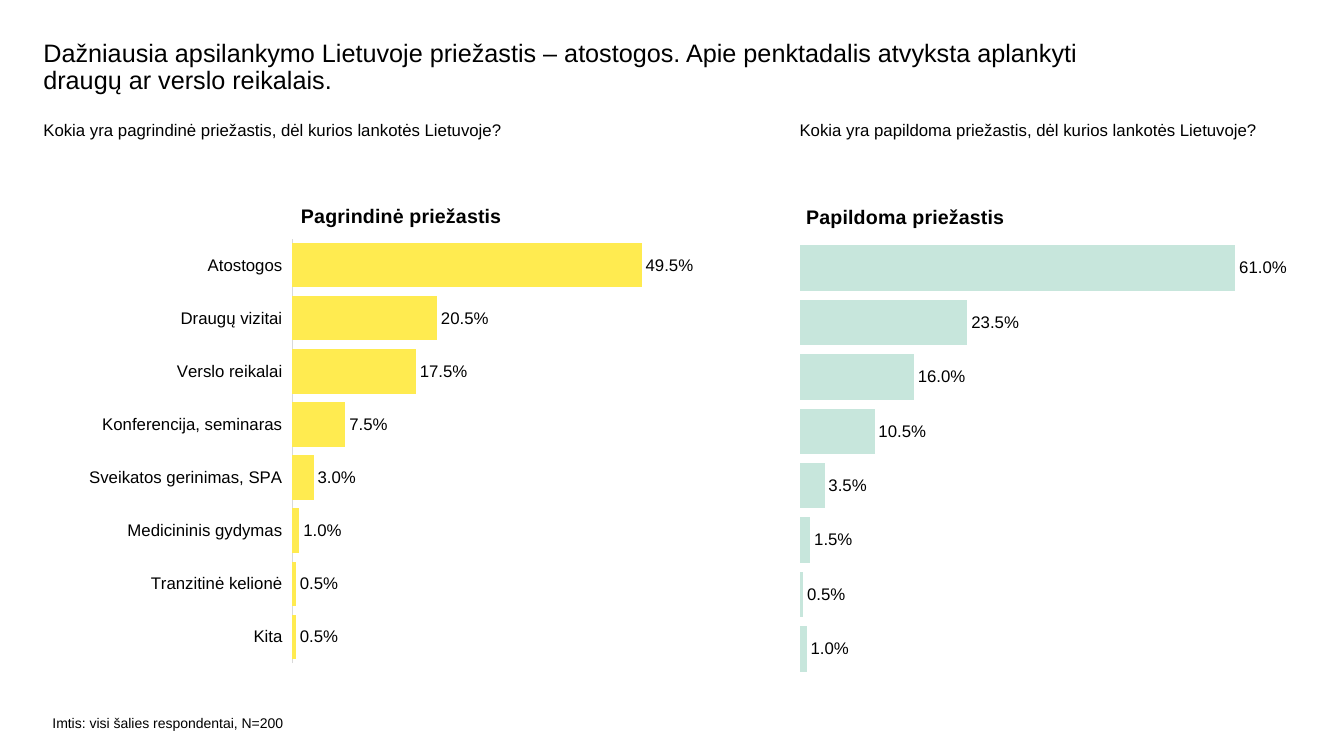
from dataclasses import dataclass

from lxml.etree import SubElement
from pptx import Presentation
from pptx.chart.chart import Chart
from pptx.chart.data import CategoryChartData
from pptx.dml.color import RGBColor
from pptx.enum.chart import XL_CHART_TYPE as ChartType
from pptx.enum.chart import XL_LABEL_POSITION as LabelPosition
from pptx.enum.chart import XL_TICK_LABEL_POSITION as TickLabelPosition
from pptx.enum.chart import XL_TICK_MARK as TickMark
from pptx.enum.text import MSO_ANCHOR as Anchor
from pptx.oxml.ns import qn
from pptx.oxml.xmlchemy import BaseOxmlElement
from pptx.slide import Slide
from pptx.text.text import Font, TextFrame
from pptx.util import Inches, Pt

BLACK = RGBColor(0x00, 0x00, 0x00)
YELLOW = RGBColor(0xFF, 0xEB, 0x50)
MINT = RGBColor(0xC7, 0xE6, 0xDC)
AXIS_GRAY = RGBColor(0xD9, 0xD9, 0xD9)
FONT_NAME = "Arial"
PERCENT = "0.0%"


@dataclass(frozen=True)
class Box:
    left: float
    top: float
    width: float
    height: float


@dataclass(frozen=True)
class ReasonChart:
    title: str
    frame: Box
    plot: Box
    title_left: float
    title_top: float
    categories: list[str]
    values: list[float]
    axis_maximum: float
    color: RGBColor
    show_categories: bool


@dataclass(frozen=True)
class Note:
    text: str
    box: Box
    size: int
    tab: float | None = None


TITLE = ("Dažniausia apsilankymo Lietuvoje priežastis – atostogos. "
         "Apie penktadalis atvyksta aplankyti draugų ar verslo reikalais.")
TITLE_BOX = Box(0.43, 0.4, 10.85, 0.6)

NOTES = [
    Note("Kokia yra pagrindinė priežastis, dėl kurios lankotės Lietuvoje?\t"
         "Kokia yra papildoma priežastis, dėl kurios lankotės Lietuvoje?",
         Box(0.43, 1.19, 12.29, 0.61), 12, tab=7.5),
    Note("Imtis: visi šalies respondentai, N=200", Box(0.52, 7.09, 2.53, 0.24), 10),
]

# Categories and values run from the top bar to the bottom bar
CHARTS = [
    ReasonChart(
        "Pagrindinė priežastis", Box(0.82, 1.8, 6.42, 4.87), Box(2.9, 2.37, 4.2, 4.21),
        2.95, 1.98,
        ["Atostogos", "Draugų vizitai", "Verslo reikalai", "Konferencija, seminaras",
         "Sveikatos gerinimas, SPA", "Medicininis gydymas", "Tranzitinė kelionė", "Kita"],
        [0.495, 0.205, 0.175, 0.075, 0.03, 0.01, 0.005, 0.005], 0.6, YELLOW, True),
    ReasonChart(
        "Papildoma priežastis", Box(7.83, 1.8, 5.17, 5), Box(7.93, 2.39, 4.96, 4.32),
        7.96, 1.99,
        [str(number) for number in range(8, 0, -1)],
        [0.61, 0.235, 0.16, 0.105, 0.035, 0.015, 0.005, 0.01], 0.7, MINT, False),
]


def inches(box: Box) -> tuple[Inches, Inches, Inches, Inches]:
    return Inches(box.left), Inches(box.top), Inches(box.width), Inches(box.height)


def style_font(font: Font, size: int, bold: bool = False) -> None:
    font.name = FONT_NAME
    font.size = Pt(size)
    font.bold = bold
    font.color.rgb = BLACK


def fill_text(text_frame: TextFrame, text: str, size: int, tab: float | None = None) -> None:
    text_frame.word_wrap = True
    text_frame.vertical_anchor = Anchor.TOP
    text_frame.margin_left = text_frame.margin_right = 0
    text_frame.margin_top = text_frame.margin_bottom = 0
    text_frame.text = text
    paragraph = text_frame.paragraphs[0]
    if tab is not None:
        tab_list = SubElement(paragraph._p.get_or_add_pPr(), qn("a:tabLst"))
        SubElement(tab_list, qn("a:tab"), pos=str(Inches(tab)), algn="l")
    style_font(paragraph.font, size)


def set_layout(parent: BaseOxmlElement, index: int, settings: dict[str, str | float]) -> None:
    """Replace the manual layout of a chart part."""
    for old_layout in parent.findall(qn("c:layout")):
        parent.remove(old_layout)
    layout = SubElement(parent, qn("c:layout"))
    manual = SubElement(layout, qn("c:manualLayout"))
    for name, value in settings.items():
        SubElement(manual, qn(f"c:{name}"), val=str(value))
    parent.insert(index, layout)


def place_chart_parts(chart: Chart, reason: ReasonChart) -> None:
    frame, plot = reason.frame, reason.plot
    set_layout(chart.chart_title._element, 1, {
        "xMode": "edge", "yMode": "edge",
        "x": (reason.title_left - frame.left) / frame.width,
        "y": (reason.title_top - frame.top) / frame.height,
    })
    set_layout(chart._chartSpace.chart.plotArea, 0, {
        "layoutTarget": "inner", "xMode": "edge", "yMode": "edge",
        "x": (plot.left - frame.left) / frame.width,
        "y": (plot.top - frame.top) / frame.height,
        "w": plot.width / frame.width,
        "h": plot.height / frame.height,
    })


def add_reason_chart(slide: Slide, reason: ReasonChart) -> None:
    data = CategoryChartData(number_format=PERCENT)
    data.categories = reason.categories[::-1]
    data.add_series("Series 1", reason.values[::-1])
    chart = slide.shapes.add_chart(ChartType.BAR_CLUSTERED, *inches(reason.frame), data).chart
    style_font(chart.font, 12)
    chart.has_legend = False

    # Title
    chart.has_title = True
    title_frame = chart.chart_title.text_frame
    title_frame.text = reason.title
    style_font(title_frame.paragraphs[0].font, 14, bold=True)

    # Axes
    value_axis = chart.value_axis
    value_axis.minimum_scale = 0
    value_axis.maximum_scale = reason.axis_maximum
    value_axis.has_major_gridlines = False
    value_axis.visible = False
    category_axis = chart.category_axis
    category_axis.visible = reason.show_categories
    category_axis.major_tick_mark = TickMark.NONE
    category_axis.tick_label_position = TickLabelPosition.LOW
    category_axis.format.line.color.rgb = AXIS_GRAY
    category_axis.format.line.width = Pt(0.75)
    style_font(category_axis.tick_labels.font, 12)

    # Bars and their labels
    plot = chart.plots[0]
    plot.gap_width = 20
    plot.vary_by_categories = False
    series = plot.series[0]
    series.format.fill.solid()
    series.format.fill.fore_color.rgb = reason.color
    labels = series.data_labels
    labels.show_value = True
    labels.position = LabelPosition.OUTSIDE_END
    labels.number_format = PERCENT
    labels.number_format_is_linked = False
    style_font(labels.font, 12)

    place_chart_parts(chart, reason)


def main() -> None:
    presentation = Presentation()
    presentation.slide_width = Inches(13.33)
    presentation.slide_height = Inches(7.5)
    slide = presentation.slides.add_slide(presentation.slide_layouts[5])

    # Heading
    title = slide.shapes.title
    title.left, title.top, title.width, title.height = inches(TITLE_BOX)
    fill_text(title.text_frame, TITLE, 18)
    heading = title.text_frame.paragraphs[0]
    heading.alignment = 1
    heading.line_spacing = 0.9

    # Questions and sample note
    for note in NOTES:
        text_box = slide.shapes.add_textbox(*inches(note.box))
        fill_text(text_box.text_frame, note.text, note.size, note.tab)

    # Charts
    for reason in CHARTS:
        add_reason_chart(slide, reason)

    presentation.save("out.pptx")


if __name__ == "__main__":
    main()
